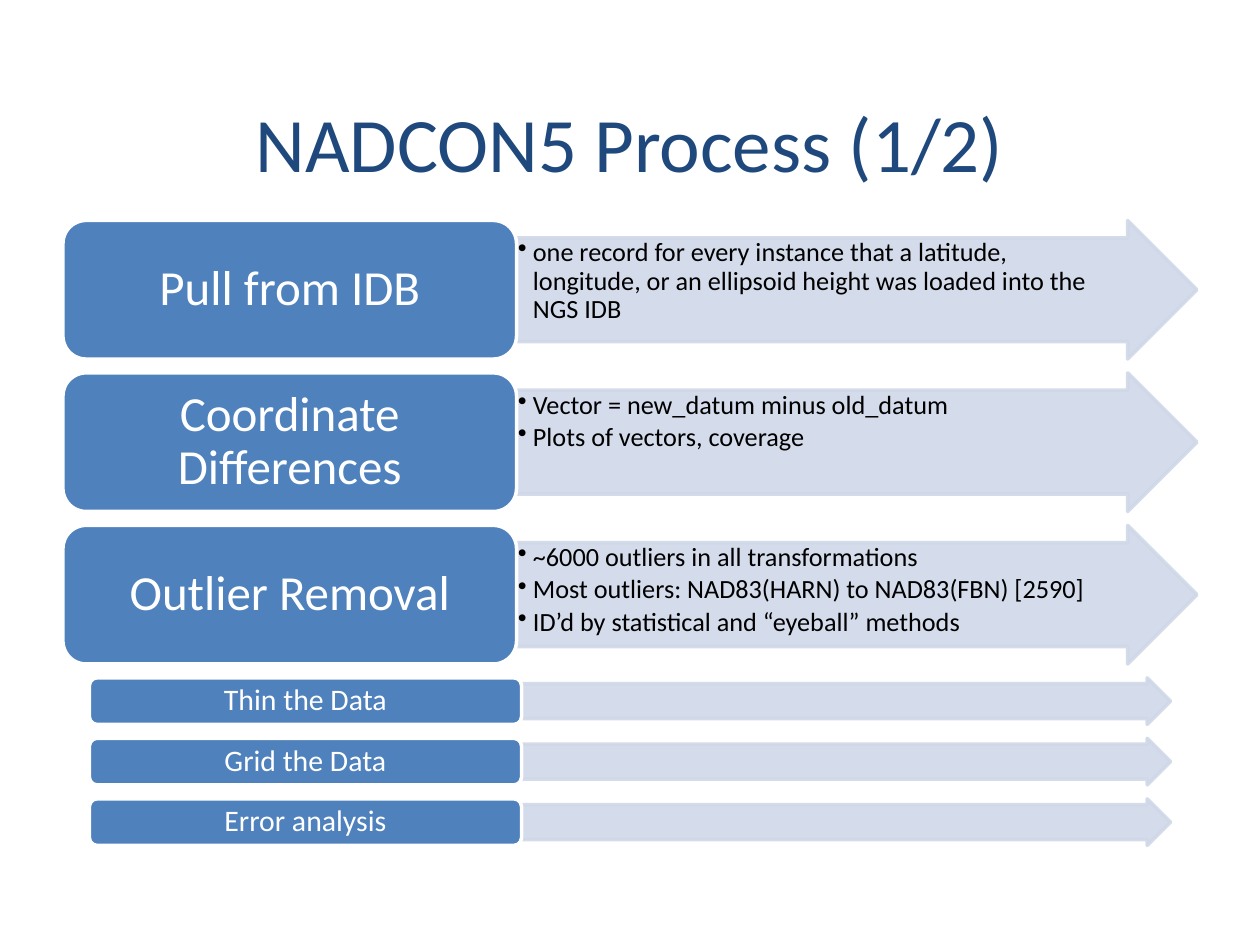
import pptx
import pptx.dml.color
import pptx.enum.shapes
import pptx.enum.text
import pptx.oxml
import pptx.oxml.ns
import pptx.util

EMU_PER_PX = 9144  # 100 px to the inch
FONT = "Calibri"
COLORS = {
    "title": "1F497D",
    "label": "4F81BD",
    "arrow": "D0D8E8",
    "white": "FFFFFF",
    "black": "000000",
}
ARROW_OPACITY = 90
ROW_GAP = 11
SHAPES = pptx.enum.shapes.MSO_SHAPE
ALIGN = pptx.enum.text.PP_ALIGN
ANCHOR = pptx.enum.text.MSO_ANCHOR

DETAILED_STEPS = [
    ("Pull from IDB", [
        "one record for every instance that a latitude, longitude, "
        "or an ellipsoid height was loaded into the NGS IDB",
    ]),
    ("Coordinate Differences", [
        "Vector = new_datum minus old_datum",
        "Plots of vectors, coverage",
    ]),
    ("Outlier Removal", [
        "~6000 outliers in all transformations",
        "Most outliers: NAD83(HARN) to NAD83(FBN) [2590]",
        "ID’d by statistical and “eyeball” methods",
    ]),
]
SHORT_STEPS = [(name, []) for name in ("Thin the Data", "Grid the Data", "Error analysis")]


def px(length):
    return pptx.util.Emu(length * EMU_PER_PX)


def rgb(name):
    return pptx.dml.color.RGBColor.from_string(COLORS[name])


def add_bullet(paragraph, indent):
    properties = paragraph._p.get_or_add_pPr()
    properties.set("marL", str(px(indent)))
    properties.set("indent", str(-px(indent)))
    bullet = pptx.oxml.parse_xml(
        f'<a:buChar {pptx.oxml.ns.nsdecls("a")} char="•"/>')
    properties.append(bullet)


def write_text(shape, lines, size, color, align=ALIGN.CENTER, anchor=ANCHOR.MIDDLE,
               insets=(10, 5, 10, 5), line_spacing=1.0, space_after=0, bullet_indent=0):
    frame = shape.text_frame
    frame.word_wrap = True
    frame.vertical_anchor = anchor
    (frame.margin_left, frame.margin_top,
     frame.margin_right, frame.margin_bottom) = map(px, insets)
    for index, line in enumerate(lines):
        paragraph = frame.paragraphs[0] if index == 0 else frame.add_paragraph()
        if bullet_indent:
            add_bullet(paragraph, bullet_indent)
        paragraph.alignment = align
        paragraph.line_spacing = line_spacing
        paragraph.space_after = pptx.util.Pt(space_after)
        run = paragraph.add_run()
        run.text = line
        run.font.name = FONT
        run.font.size = pptx.util.Pt(size)
        run.font.color.rgb = rgb(color)


def add_block(slide, kind, box, fill, line, opacity=100):
    shape = slide.shapes.add_shape(kind, *map(px, box))
    shape.shadow.inherit = False
    shape.fill.solid()
    shape.fill.fore_color.rgb = rgb(fill)
    shape.line.color.rgb = rgb(line)
    shape.line.width = pptx.util.Pt(2)
    if opacity < 100:
        for color in shape._element.spPr.iter(pptx.oxml.ns.qn("a:srgbClr")):
            color.append(pptx.oxml.parse_xml(
                f'<a:alpha {pptx.oxml.ns.nsdecls("a")} val="{opacity * 1000}"/>'))
    return shape


def add_title(slide, box, text):
    title = slide.shapes.add_textbox(*map(px, box))
    write_text(title, [text], size=44, color="title")


def add_step(slide, box, label_width, name, details, size, insets):
    left, top, width, height = box

    # Arrow with the details of the step
    arrow_box = (left + label_width, top, width - label_width, height)
    arrow = add_block(slide, SHAPES.RIGHT_ARROW, arrow_box, "arrow", "arrow", ARROW_OPACITY)
    arrow.adjustments[0] = 0.75
    arrow.adjustments[1] = 0.5
    if details:
        write_text(arrow, details, size=15, color="black", align=ALIGN.LEFT,
                   anchor=ANCHOR.TOP, insets=(1, 1, 28, 1), line_spacing=0.9,
                   space_after=2.25, bullet_indent=12)

    # Label with the name of the step
    label = add_block(slide, SHAPES.ROUNDED_RECTANGLE, (left, top, label_width, height),
                      "label", "white")
    write_text(label, [name], size=size, color="white", insets=insets, line_spacing=0.9)


def add_steps(slide, box, row_height, label_width, steps, size, insets):
    left, top, width = box
    for index, (name, details) in enumerate(steps):
        row_top = top + index * (row_height + ROW_GAP)
        add_step(slide, (left, row_top, width, row_height), label_width,
                 name, details, size, insets)


def main():
    presentation = pptx.Presentation()
    presentation.slide_width = px(1000)
    presentation.slide_height = px(750)
    slide = presentation.slides.add_slide(presentation.slide_layouts[6])

    add_title(slide, (50, 50, 900, 125), "NADCON5 Process (1/2)")
    add_steps(slide, (50, 175, 900), 110, 360, DETAILED_STEPS,
              size=28, insets=(12, 6, 12, 6))
    add_steps(slide, (71, 538, 858), 37, 343, SHORT_STEPS,
              size=17, insets=(7, 4, 7, 4))

    presentation.save("out.pptx")


if __name__ == "__main__":
    main()
